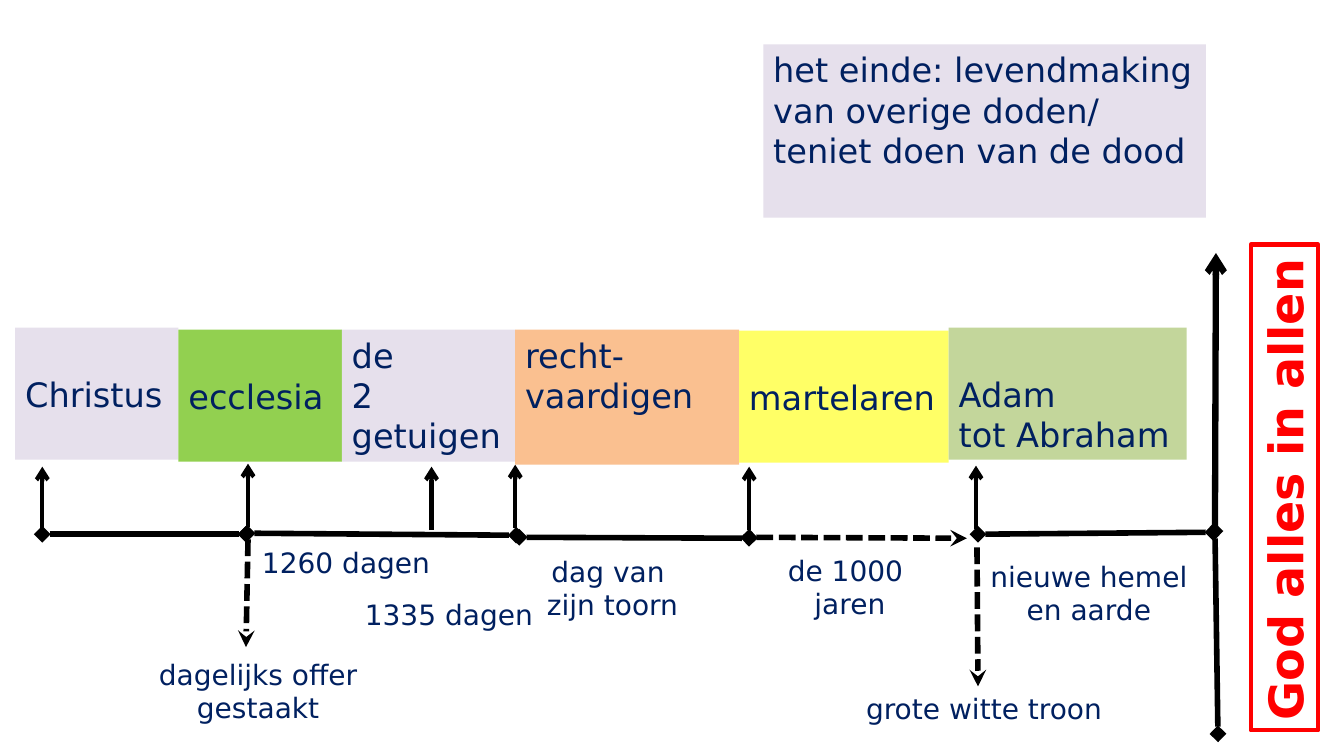
from dataclasses import dataclass

from pptx import Presentation
from pptx import util as u
from pptx.dml.color import RGBColor
from pptx.enum import dml, shapes, text
from pptx.oxml.ns import qn
from lxml import etree

TOP, MIDDLE, BOTTOM = text.MSO_ANCHOR.TOP, text.MSO_ANCHOR.MIDDLE, text.MSO_ANCHOR.BOTTOM
LEFT, CENTER = text.PP_ALIGN.LEFT, text.PP_ALIGN.CENTER


@dataclass(frozen=True)
class Theme:
    font: str = "DejaVu Sans"
    navy: str = "002060"
    black: str = "000000"
    red: str = "FF0000"
    lilac: str = "E6E0EC"
    green: str = "92D050"
    orange: str = "FAC090"
    yellow: str = "FFFF66"
    olive: str = "C3D69B"
    label: int = 20
    group: int = 24
    banner: int = 34


class TimelineSlide:
    """Draws timeline elements on a grid of 133.3 columns by 75 rows."""

    columns, rows = 133.3, 75

    def __init__(self, presentation, theme):
        self.theme = theme
        self.column = presentation.slide_width / self.columns
        self.row = presentation.slide_height / self.rows
        self.slide = presentation.slides.add_slide(presentation.slide_layouts[6])

    def place(self, left, top, width, height):
        return [u.Emu(round(value * unit)) for value, unit in
                zip((left, top, width, height), (self.column, self.row) * 2)]

    def fill_text(self, shape, lines, size, color, align=LEFT, anchor=TOP, bold=False):
        frame = shape.text_frame
        for name, value in {"word_wrap": True, "vertical_anchor": anchor}.items():
            setattr(frame, name, value)
        font_format = {"name": self.theme.font, "size": u.Pt(size), "bold": bold}
        for index, line in enumerate(lines):
            paragraph = frame.add_paragraph() if index else frame.paragraphs[0]
            paragraph.text = line
            paragraph.alignment = align
            for run in paragraph.runs:
                for name, value in font_format.items():
                    setattr(run.font, name, value)
                run.font.color.rgb = RGBColor.from_string(color)

    def label(self, box, *lines, align=CENTER):
        shape = self.slide.shapes.add_textbox(*self.place(*box))
        self.fill_text(shape, lines, self.theme.label, self.theme.navy, align)

    def rectangle(self, box):
        shape = self.slide.shapes.add_shape(shapes.MSO_SHAPE.RECTANGLE, *self.place(*box))
        shape.shadow.inherit = False
        return shape

    def block(self, box, fill, *lines, anchor=TOP):
        shape = self.rectangle(box)
        shape.fill.solid()
        shape.fill.fore_color.rgb = RGBColor.from_string(fill)
        shape.line.fill.background()
        self.fill_text(shape, lines, self.theme.group, self.theme.navy, anchor=anchor)

    def banner(self, box, line):
        shape = self.rectangle(box)
        shape.rotation = 270
        shape.fill.background()
        shape.line.color.rgb = RGBColor.from_string(self.theme.red)
        shape.line.width = u.Pt(3)
        self.fill_text(shape, [line], self.theme.banner, self.theme.red, bold=True)

    def line(self, start, end, width=4, head=None, tail=None, dashed=False):
        connector = self.slide.shapes.add_connector(
            shapes.MSO_CONNECTOR.STRAIGHT, *self.place(*start, *end))
        connector.line.color.rgb = RGBColor.from_string(self.theme.black)
        connector.line.width = u.Pt(width)
        if dashed:
            connector.line.dash_style = dml.MSO_LINE.SQUARE_DOT
        properties = connector._element.spPr.find(qn("a:ln"))
        for tag, kind in {"a:headEnd": head, "a:tailEnd": tail}.items():
            if kind:
                etree.SubElement(properties, qn(tag), type=kind)
        etree.SubElement(connector._element.spPr, qn("a:effectLst"))


def main():
    theme = Theme()
    presentation = Presentation()
    presentation.slide_width, presentation.slide_height = u.Inches(13.33), u.Inches(7.5)
    timeline = TimelineSlide(presentation, theme)

    periods = [
        ((4.2, 53), (24.4, 53)),
        ((24.5, 52.9), (51.2, 53.1)),
        ((51.5, 53.3), (74.3, 53.4)),
        ((97, 53), (120.3, 52.8)),
        ((120.8, 72.8), (120.5, 52.7)),
    ]
    for start, end in periods:
        timeline.line(start, end, head="diamond", tail="diamond")

    timeline.line((74.3, 53.3), (95.9, 53.4), head="diamond", tail="stealth", dashed=True)
    for start, end in [((24.6, 53.5), (24.4, 64.2)), ((96.9, 54.3), (97, 68.1))]:
        timeline.line(start, end, tail="stealth", dashed=True)

    for x, tip in [(4.2, 46.3), (24.6, 46), (42.8, 46.3), (51.1, 46.1), (74.3, 46.3), (96.8, 46.2)]:
        timeline.line((x, tip + 6.3), (x, tip), width=3, tail="arrow")
    timeline.line((120.5, 52.9), (120.6, 25.1), width=4.5, tail="arrow")

    groups = [
        (16.2, 32.5, 13.1, theme.lilac, MIDDLE, ["Christus"]),
        (16.2, 32.7, 13.1, theme.green, MIDDLE, ["ecclesia"]),
        (17.2, 32.7, 13.1, theme.lilac, TOP, ["de", "2 getuigen"]),
        (22.2, 32.7, 13.4, theme.orange, TOP, ["recht-", "vaardigen"]),
        (20.8, 32.8, 13.1, theme.yellow, MIDDLE, ["martelaren"]),
        (23.6, 32.5, 13.1, theme.olive, BOTTOM, ["Adam", "tot Abraham"]),
    ]
    left = 1.5
    for width, top, height, fill, anchor, lines in groups:
        timeline.block((left, top, width, height), fill, *lines, anchor=anchor)
        left += width
    timeline.block((75.7, 4.4, 43.9, 17.2), theme.lilac,
                   "het einde: levendmaking van overige doden/ teniet doen van de dood")
    timeline.banner((103.3, 45, 48.2, 6.7), "God alles in allen")

    timeline.label((25, 53.6, 25.6, 4.4), "1260 dagen", align=LEFT)
    timeline.label((35.2, 58.8, 25.6, 4.4), "1335 dagen", align=LEFT)
    timeline.label((10.7, 64.7, 29.8, 7.7), "dagelijks offer\vgestaakt")
    timeline.label((44.4, 54.5, 32.7, 7.7), "dag van ", "zijn toorn")
    timeline.label((72.6, 54.4, 23.4, 7.7), "de 1000 ", "jaren")
    timeline.label((96.3, 55, 23.4, 7.7), "nieuwe hemel en aarde")
    timeline.label((82.7, 68.1, 29.8, 4.4), "grote witte troon")

    presentation.save("out.pptx")


if __name__ == "__main__":
    main()
